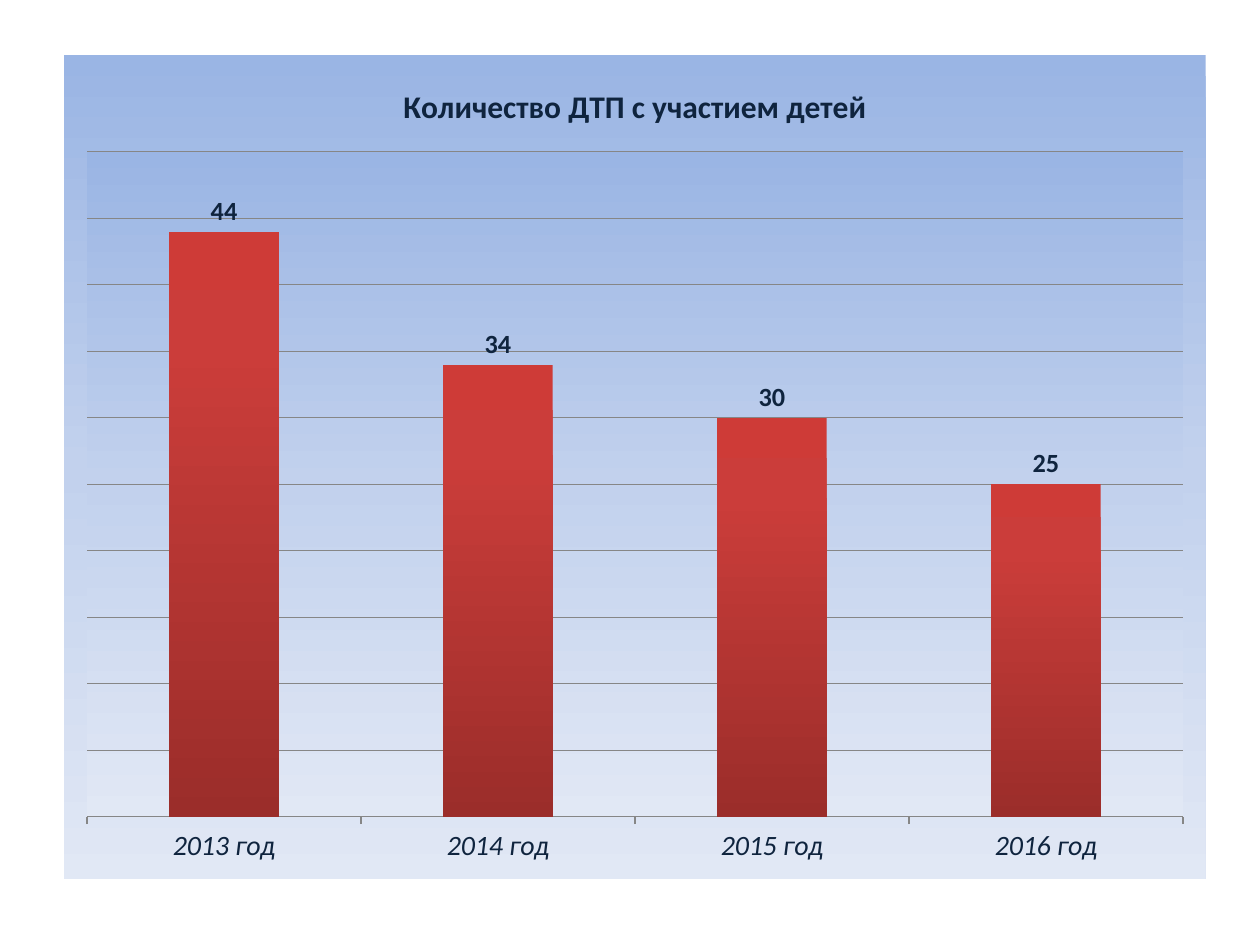
from lxml import etree
from pptx import Presentation
from pptx.chart.data import CategoryChartData
from pptx.dml.color import RGBColor
from pptx.enum.chart import XL_CHART_TYPE as ChartType, XL_LABEL_POSITION as LabelPosition
from pptx.enum.chart import XL_TICK_MARK as TickMark
from pptx.oxml import parse_xml
from pptx.oxml.ns import nsdecls, qn
from pptx.util import Inches, Pt

TITLE = "Количество ДТП с участием детей"
ACCIDENTS = {"2013 год": 44, "2014 год": 34, "2015 год": 30, "2016 год": 25}

NAVY = RGBColor(0x0F, 0x24, 0x3E)
BLACK = RGBColor(0, 0, 0)
GRAY = RGBColor(0x86, 0x86, 0x86)
SKY = [(0, RGBColor(0x9A, 0xB5, 0xE4)), (50, RGBColor(0xC2, 0xD1, 0xED)),
       (100, RGBColor(0xE1, 0xE8, 0xF5))]
RED = [(0, RGBColor(0xCE, 0x3B, 0x37)), (20, RGBColor(0xCB, 0x3D, 0x3A)),
       (100, RGBColor(0x9B, 0x2D, 0x2A))]
PLOT_LAYOUT = {"x": 0.02, "y": 0.117, "w": 0.96, "h": 0.807}


def gradient_properties(stops):
    """Chart shape properties: a top-to-bottom gradient without an outline."""
    stop_xml = "".join(
        f'<a:gs pos="{position * 1000}"><a:srgbClr val="{color}"/></a:gs>'
        for position, color in stops)
    return parse_xml(
        f'<c:spPr {nsdecls("c", "a")}><a:gradFill rotWithShape="1">'
        f'<a:gsLst>{stop_xml}</a:gsLst><a:lin ang="5400000" scaled="0"/>'
        '</a:gradFill><a:ln><a:noFill/></a:ln></c:spPr>')


def set_plot_layout(plot_area, layout):
    """Pin the inner plot area, in fractions of the chart."""
    for old_layout in plot_area.findall(qn("c:layout")):
        plot_area.remove(old_layout)
    modes = '<c:layoutTarget val="inner"/><c:xMode val="edge"/><c:yMode val="edge"/>'
    sizes = "".join(f'<c:{key} val="{value}"/>' for key, value in layout.items())
    plot_area.insert(0, parse_xml(
        f'<c:layout {nsdecls("c")}><c:manualLayout>{modes}{sizes}'
        '</c:manualLayout></c:layout>'))


def style_font(font, size, color, bold=False, italic=False):
    font.name = "Calibri"
    font.size = Pt(size)
    font.bold = bold
    font.italic = italic
    font.color.rgb = color


def style_line(line):
    line.color.rgb = GRAY
    line.width = Pt(0.75)


prs = Presentation()
prs.slide_width, prs.slide_height = Inches(10), Inches(7.5)
slide = prs.slides.add_slide(prs.slide_layouts[6])

accident_data = CategoryChartData()
accident_data.categories = list(ACCIDENTS)
accident_data.add_series("Series 1", list(ACCIDENTS.values()))
chart = slide.shapes.add_chart(
    ChartType.COLUMN_CLUSTERED, Inches(0.51), Inches(0.44),
    Inches(9.06), Inches(6.54), accident_data).chart
style_font(chart.font, 10, BLACK)
chart.has_legend = False

chart.has_title = True
heading = chart.chart_title.text_frame.paragraphs[0]
heading.text = TITLE
style_font(heading.font, 18, NAVY, bold=True)
chart.chart_title.include_in_layout = False

years = chart.category_axis
years.major_tick_mark = TickMark.OUTSIDE
style_font(years.tick_labels.font, 16, NAVY, italic=True)
style_line(years.format.line)

counts = chart.value_axis
counts.minimum_scale, counts.maximum_scale, counts.major_unit = 0, 50, 5
counts.has_major_gridlines = True
style_line(counts.major_gridlines.format.line)
counts.visible = False

columns = chart.plots[0]
columns.gap_width = 150
columns.vary_by_categories = False
columns.has_data_labels = True
labels = columns.data_labels
labels.show_value = True
labels.position = LabelPosition.OUTSIDE_END
style_font(labels.font, 15, NAVY, bold=True)

series = columns.series[0]
series.invert_if_negative = False
series.format.fill.background()
series_properties = series._element.find(qn("c:spPr"))
series_properties.getparent().replace(series_properties, gradient_properties(RED))

chart_body = chart._chartSpace.find(qn("c:chart"))
chart_body.addnext(gradient_properties(SKY))
plot_area = chart_body.find(qn("c:plotArea"))
set_plot_layout(plot_area, PLOT_LAYOUT)
plot_area.append(gradient_properties(SKY))
# Square corners for the chart frame
corners = etree.Element(qn("c:roundedCorners"), val="0")
date_system = chart._chartSpace.find(qn("c:date1904"))
if date_system is not None and chart._chartSpace.find(qn("c:roundedCorners")) is None:
    date_system.addnext(corners)

prs.save("out.pptx")
